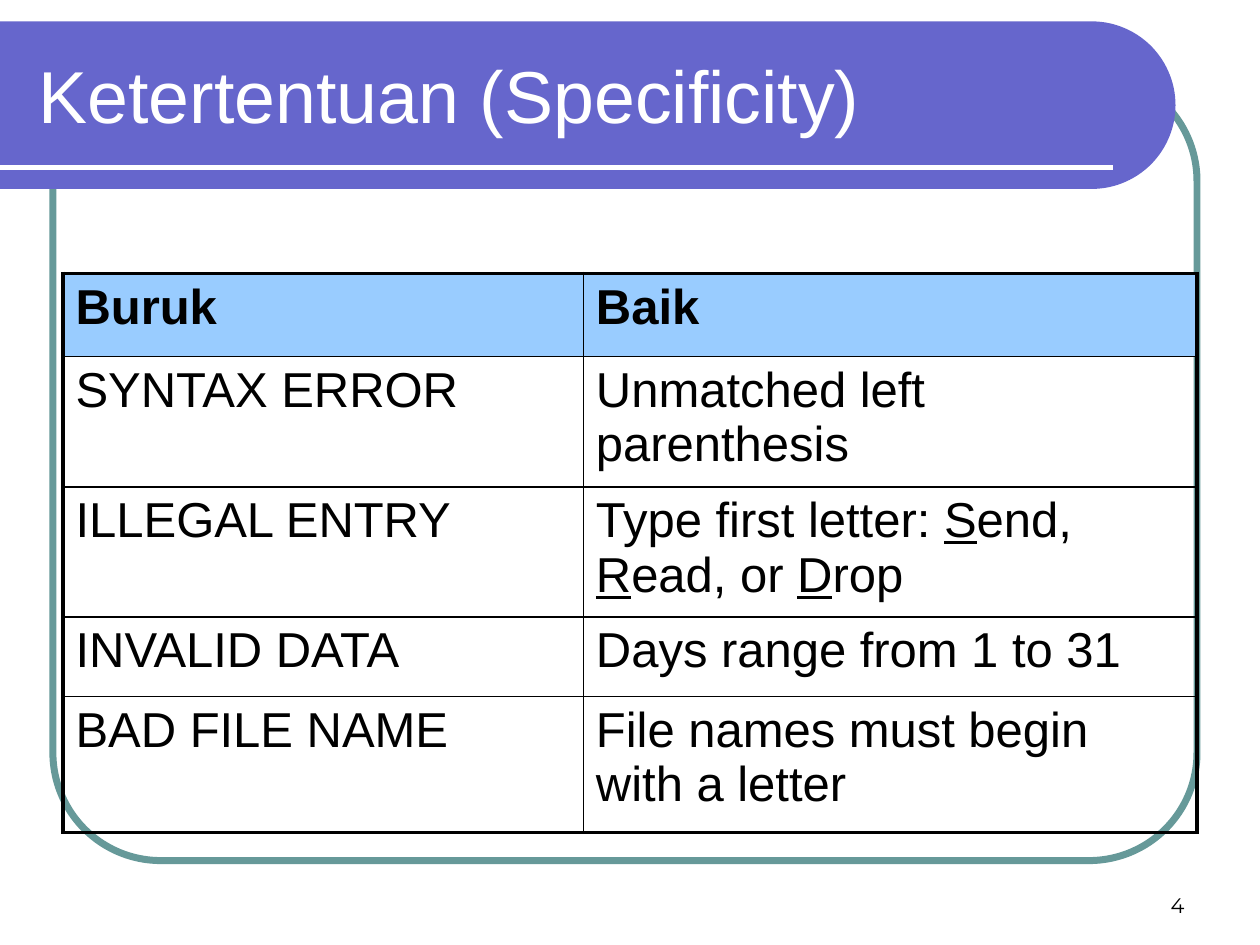
import math
from dataclasses import dataclass

from lxml import etree
from pptx import Presentation, util as u
from pptx.dml.color import RGBColor
from pptx.enum import shapes, text
from pptx.oxml import ns

COLUMN_WIDTHS = (4.13, 4.87)
ROW_HEIGHTS = (0.66, 1.03, 1.03, 0.63, 1.08)
MESSAGES = (
    ("Buruk", "Baik"),
    ("SYNTAX ERROR", "Unmatched left parenthesis"),
    ("ILLEGAL ENTRY", "Type first letter: _S_end, _R_ead, or _D_rop"),
    ("INVALID DATA", "Days range from 1 to 31"),
    ("BAD FILE NAME", "File names must begin with a letter"),
)
CELL_FORMAT = {"name": "Arial", "size": u.Pt(28)}


@dataclass
class Label:
    wording: str
    box: tuple
    font: str
    size: float
    color: str
    align: text.PP_ALIGN
    anchor: text.MSO_ANCHOR


LABELS = (
    Label("4", (7.17, 6.83, 2.33, 0.5), "Montserrat", 12, "000000",
          text.PP_ALIGN.RIGHT, text.MSO_ANCHOR.BOTTOM),
    Label("Ketertentuan (Specificity)", (0.21, 0.25, 8.77, 1), "Arial", 42,
          "FFFFFF", text.PP_ALIGN.LEFT, text.MSO_ANCHOR.MIDDLE),
)


def inches(values: tuple) -> list:
    return [u.Inches(value) for value in values]


def rgb(color: str) -> RGBColor:
    return RGBColor.from_string(color)


def apply_format(target, values: dict) -> None:
    for name, value in values.items():
        setattr(target, name, value)


def draw_label(slide, label: Label) -> None:
    frame = slide.shapes.add_textbox(*inches(label.box)).text_frame
    apply_format(frame, {"word_wrap": True, "vertical_anchor": label.anchor})
    paragraph = frame.paragraphs[0]
    paragraph.alignment = label.align
    run = paragraph.add_run()
    run.text = label.wording
    apply_format(run.font, {"name": label.font, "size": u.Pt(label.size)})
    run.font.color.rgb = rgb(label.color)


def draw_frame(slide) -> None:
    frame = slide.shapes.add_shape(
        shapes.MSO_SHAPE.ROUNDED_RECTANGLE, *inches((0.42, 0.58, 9.08, 6.25)))
    frame.adjustments[0] = 0.137
    frame.shadow.inherit = False
    frame.fill.background()
    frame.line.color.rgb = rgb("669999")
    frame.line.width = u.Pt(4)


def draw_banner(slide) -> None:
    center_x, center_y, radius = 8.665, 0.835, 0.665
    angles = [math.radians(degree) for degree in range(-90, 91, 3)]
    arc = [(center_x + radius * math.cos(a), center_y + radius * math.sin(a))
           for a in angles]
    outline = slide.shapes.build_freeform(0, u.Inches(0.17))
    outline.add_line_segments(
        [inches(point) for point in (*arc, (0, 1.5))], close=True)
    banner = outline.convert_to_shape()
    banner.shadow.inherit = False
    banner.fill.solid()
    banner.fill.fore_color.rgb = rgb("6666CC")
    banner.line.fill.background()


def draw_rule(slide) -> None:
    rule = slide.shapes.add_connector(
        shapes.MSO_CONNECTOR.STRAIGHT, *inches((0, 1.33, 8.83, 1.33)))
    rule.line.color.rgb = rgb("FFFFFF")
    rule.line.width = u.Pt(3)
    etree.SubElement(rule._element.spPr, ns.qn("a:effectLst"))


def draw_borders(cell, outer_sides: dict) -> None:
    properties = cell._tc.get_or_add_tcPr()
    for side, is_outer in outer_sides.items():
        width = u.Pt(2.25 if is_outer else 1)
        border = etree.SubElement(
            properties, ns.qn(f"a:ln{side}"), w=str(int(width)))
        fill = etree.SubElement(border, ns.qn("a:solidFill"))
        etree.SubElement(fill, ns.qn("a:srgbClr"), val="000000")


def write_message(cell, message: str, bold: bool) -> None:
    paragraph = cell.text_frame.paragraphs[0]
    for index, part in enumerate(message.split("_")):
        run = paragraph.add_run()
        run.text = part
        apply_format(run.font, CELL_FORMAT | {"bold": bold, "underline": index % 2 == 1})
        run.font.color.rgb = rgb("000000")


def draw_messages(slide) -> None:
    last_row, last_column = len(ROW_HEIGHTS) - 1, len(COLUMN_WIDTHS) - 1
    table = slide.shapes.add_table(
        len(ROW_HEIGHTS), len(COLUMN_WIDTHS),
        *inches((0.5, 2.17, sum(COLUMN_WIDTHS), sum(ROW_HEIGHTS)))).table
    apply_format(table, {"first_row": False, "horz_banding": False})
    for column, width in zip(table.columns, COLUMN_WIDTHS):
        column.width = u.Inches(width)
    for row, (height, messages) in enumerate(zip(ROW_HEIGHTS, MESSAGES)):
        table.rows[row].height = u.Inches(height)
        for column, message in enumerate(messages):
            cell = table.cell(row, column)
            draw_borders(cell, {"L": column == 0, "R": column == last_column,
                                "T": row == 0, "B": row == last_row})
            if row == 0:
                cell.fill.solid()
                cell.fill.fore_color.rgb = rgb("99CCFF")
            else:
                cell.fill.background()
            write_message(cell, message, bold=row == 0)


def main() -> None:
    deck = Presentation()
    apply_format(deck, {"slide_width": u.Inches(10), "slide_height": u.Inches(7.5)})
    slide = deck.slides.add_slide(deck.slide_layouts[6])
    draw_frame(slide)
    draw_banner(slide)
    draw_rule(slide)
    for label in LABELS:
        draw_label(slide, label)
    draw_messages(slide)
    deck.save("out.pptx")


if __name__ == "__main__":
    main()
